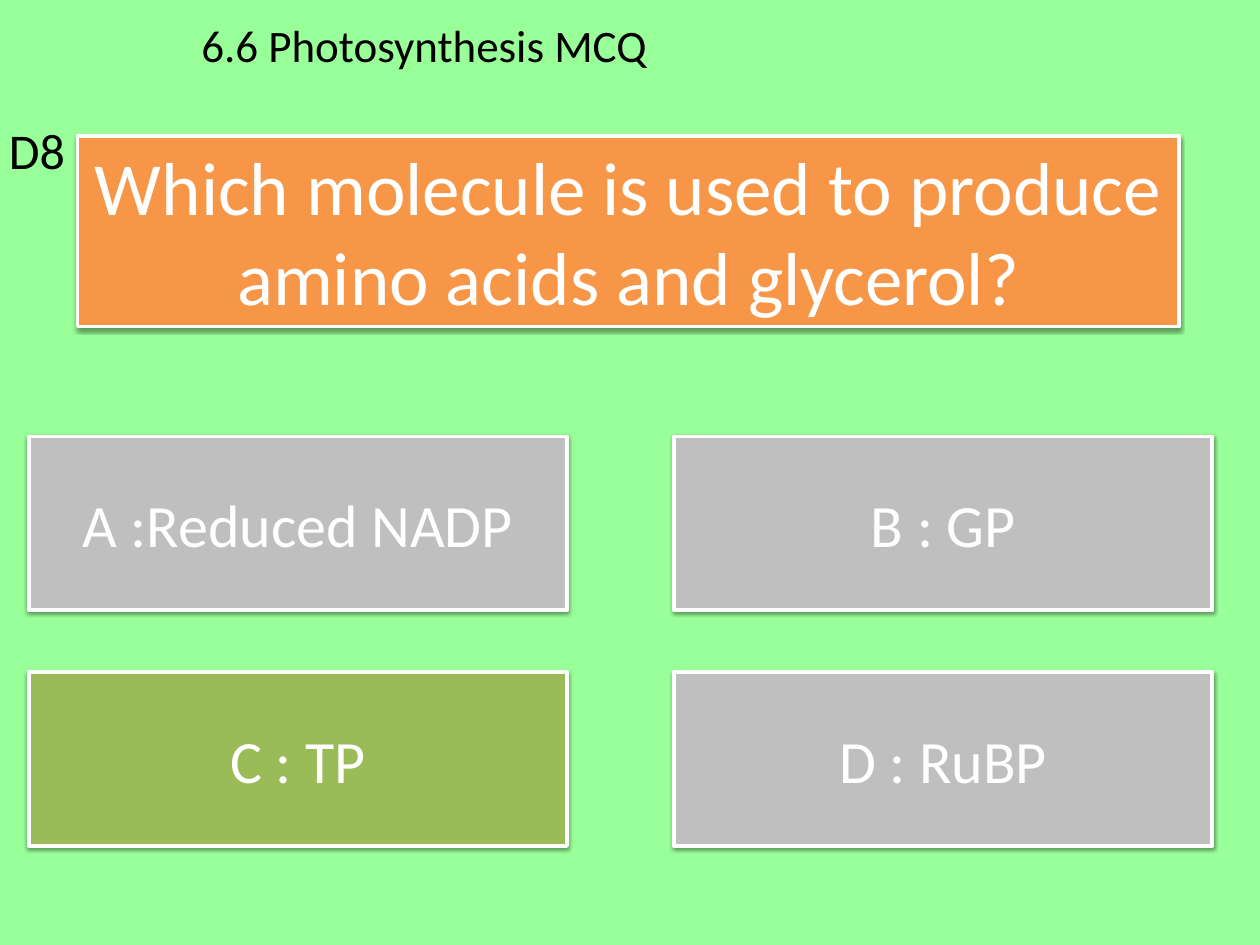
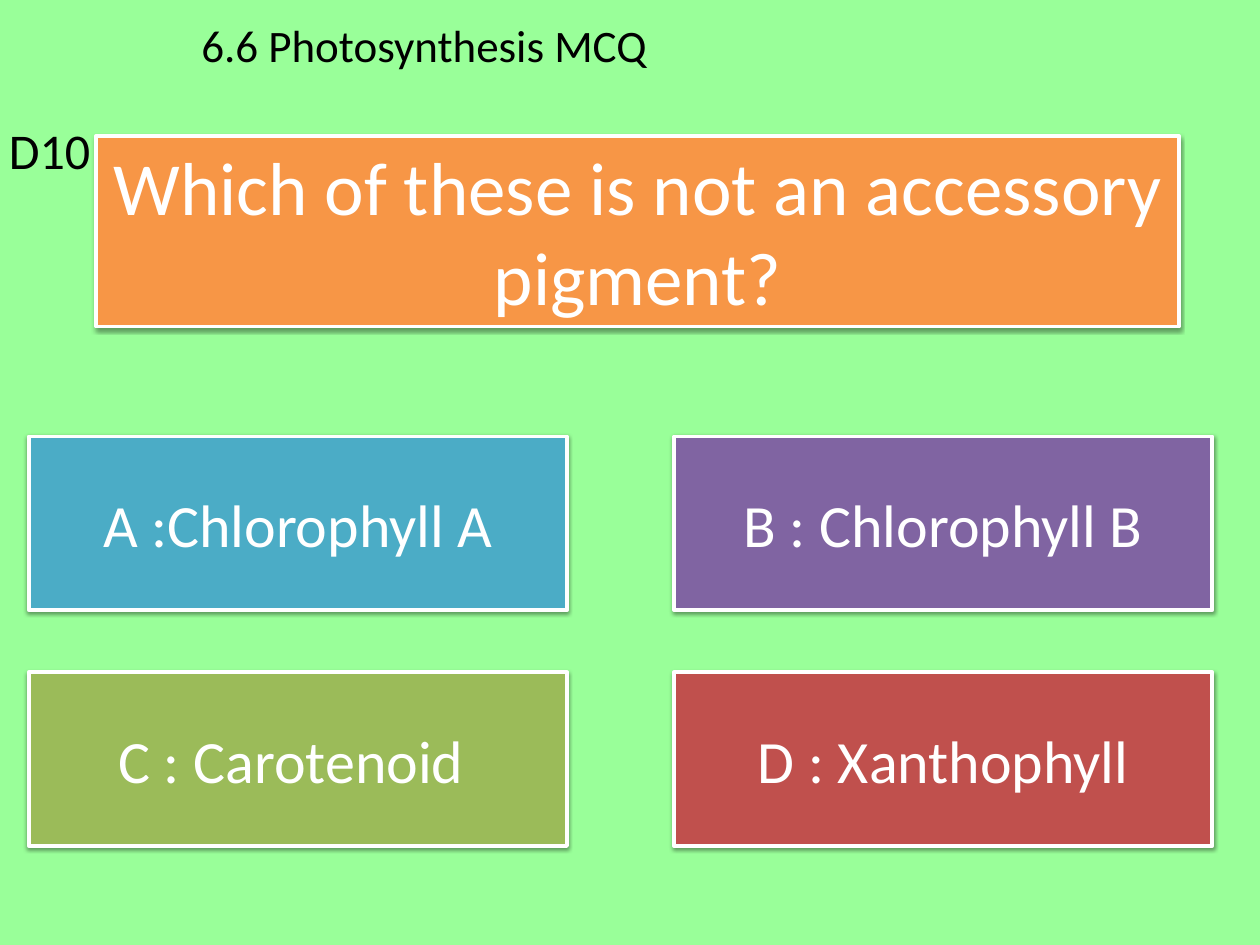
from dataclasses import dataclass

from lxml.etree import SubElement
from pptx import Presentation
from pptx.dml.color import RGBColor
from pptx.enum.shapes import MSO_SHAPE
from pptx.enum.text import MSO_ANCHOR as Anchor, MSO_AUTO_SIZE as AutoSize, PP_ALIGN as Align
from pptx.oxml.ns import qn
from pptx.shapes.autoshape import Shape
from pptx.slide import Slide
from pptx.util import Pt

FONT = "Calibri"
BACKGROUND, INK, WHITE = "99FF99", "000000", "FFFFFF"
ORANGE, GREY, GREEN = "F79646", "BFBFBF", "9BBB59"
TEAL, PURPLE, RED = "4BACC6", "8064A2", "C0504D"

QUIZ_TITLE = "6.6 Photosynthesis MCQ"
QUESTION_TOP, QUESTION_RIGHT, QUESTION_HEIGHT = 108.7, 943.2, 152.6
ANSWER_LEFT, ANSWER_TOP = 23, 349.2
ANSWER_WIDTH, ANSWER_HEIGHT = 430.6, 139
COLUMN_STEP, ROW_STEP = 516.3, 188.6


@dataclass(frozen=True)
class Box:
    left: float
    top: float
    width: float
    height: float

    def lengths(self) -> tuple[Pt, Pt, Pt, Pt]:
        return Pt(self.left), Pt(self.top), Pt(self.width), Pt(self.height)


@dataclass(frozen=True)
class Answer:
    text: str
    fill: str


@dataclass(frozen=True)
class Quiz:
    number: str
    number_width: float
    question: str
    question_left: float
    answers: tuple[Answer, ...]


QUIZZES = (
    Quiz("D8", 62, "Which molecule is used to produce amino acids and glycerol?", 62, (
        Answer("A :Reduced NADP", GREY),
        Answer("B : GP", GREY),
        Answer("C : TP", GREEN),
        Answer("D : RuBP", GREY),
    )),
    Quiz("D10", 90, "Which of these is not an accessory pigment?", 77, (
        Answer("A :Chlorophyll A", TEAL),
        Answer("B : Chlorophyll B", PURPLE),
        Answer("C : Carotenoid ", GREEN),
        Answer("D : Xanthophyll", RED),
    )),
)


def rgb(value: str) -> RGBColor:
    return RGBColor.from_string(value)


def write(shape: Shape, text: str, *, size: float, color: str = INK,
          align: Align = Align.LEFT, anchor: Anchor = Anchor.TOP, grow: bool = True) -> None:
    frame = shape.text_frame
    frame.word_wrap = True
    frame.vertical_anchor = anchor
    frame.auto_size = AutoSize.SHAPE_TO_FIT_TEXT if grow else AutoSize.NONE
    paragraph = frame.paragraphs[0]
    paragraph.alignment = align
    run = paragraph.add_run()
    run.text = text
    run.font.name = FONT
    run.font.size = Pt(size)
    run.font.color.rgb = rgb(color)


def add_soft_shadow(shape: Shape) -> None:
    shape.shadow.inherit = False
    effects = shape.element.spPr.find(qn("a:effectLst"))
    shadow = SubElement(effects, qn("a:outerShdw"), blurRad=str(Pt(3.1)), dist=str(Pt(1.6)),
                        dir=str(90 * 60000), rotWithShape="0")
    tint = SubElement(shadow, qn("a:srgbClr"), val=INK)
    SubElement(tint, qn("a:alpha"), val="38000")


def add_card(slide: Slide, box: Box, fill: str) -> Shape:
    card = slide.shapes.add_shape(MSO_SHAPE.RECTANGLE, *box.lengths())
    card.fill.solid()
    card.fill.fore_color.rgb = rgb(fill)
    card.line.color.rgb = rgb(WHITE)
    card.line.width = Pt(3)
    add_soft_shadow(card)
    return card


def add_label(slide: Slide, box: Box, text: str, size: float) -> None:
    write(slide.shapes.add_textbox(*box.lengths()), text, size=size)


def add_quiz_slide(deck: Presentation, quiz: Quiz) -> None:
    slide = deck.slides.add_slide(deck.slide_layouts[6])
    slide.background.fill.solid()
    slide.background.fill.fore_color.rgb = rgb(BACKGROUND)

    question_box = Box(quiz.question_left, QUESTION_TOP,
                       QUESTION_RIGHT - quiz.question_left, QUESTION_HEIGHT)
    question = add_card(slide, question_box, ORANGE)
    write(question, quiz.question, size=60, color=WHITE, align=Align.CENTER)

    for index, answer in enumerate(quiz.answers):
        row, column = divmod(index, 2)
        answer_box = Box(ANSWER_LEFT + column * COLUMN_STEP, ANSWER_TOP + row * ROW_STEP,
                         ANSWER_WIDTH, ANSWER_HEIGHT)
        write(add_card(slide, answer_box, answer.fill), answer.text, size=48, color=WHITE,
              align=Align.CENTER, anchor=Anchor.MIDDLE, grow=False)

    add_label(slide, Box(0, 92.2, quiz.number_width, 55.4), quiz.number, 40)
    add_label(slide, Box(154, 10.8, 410.4, 51), QUIZ_TITLE, 36)


def main() -> None:
    deck = Presentation()
    deck.slide_width, deck.slide_height = Pt(1008), Pt(756)
    for quiz in QUIZZES:
        add_quiz_slide(deck, quiz)
    deck.save("out.pptx")


if __name__ == "__main__":
    main()
